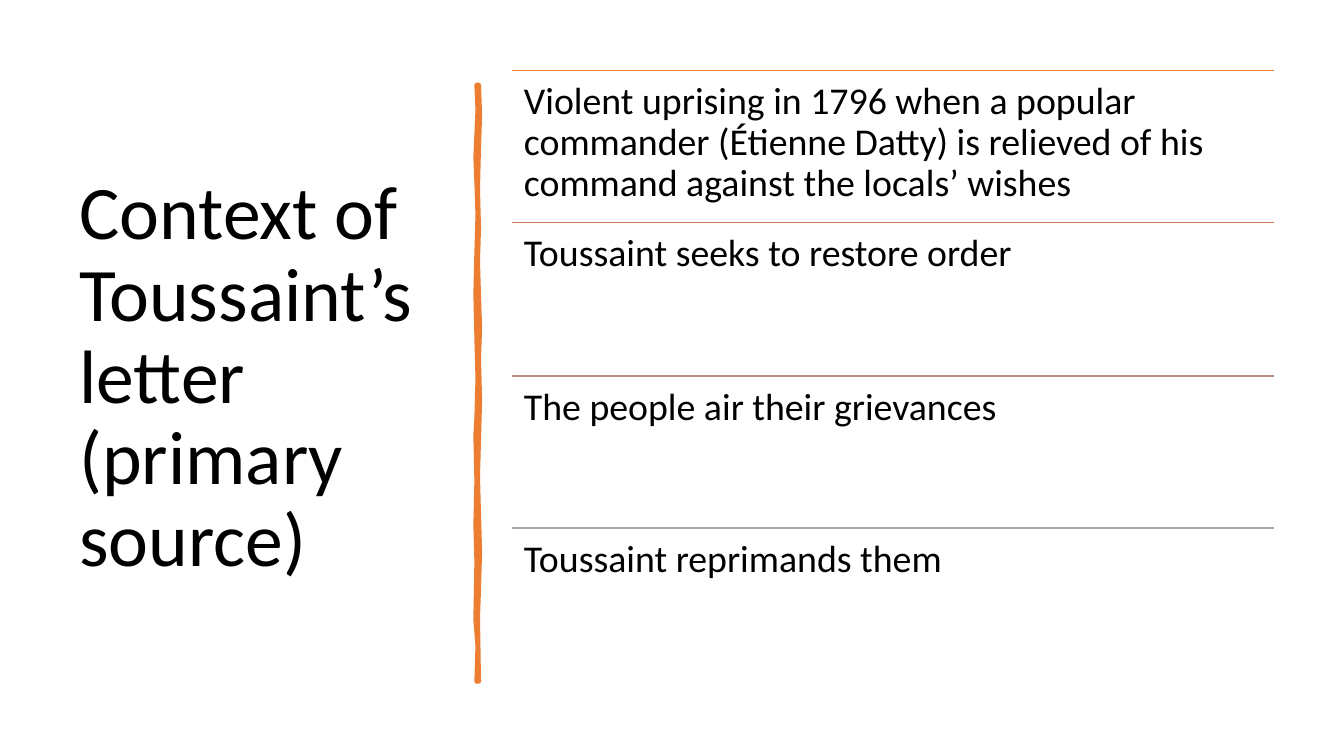
from dataclasses import dataclass

from lxml.etree import SubElement
from pptx import Presentation
from pptx.dml.color import RGBColor
from pptx.enum.shapes import MSO_CONNECTOR as Connector
from pptx.enum.text import MSO_ANCHOR as Anchor, MSO_AUTO_SIZE as AutoSize, PP_ALIGN as Align
from pptx.oxml.ns import qn
from pptx.util import Pt

PX = 9525


@dataclass(frozen=True)
class Theme:
    font: str = "Calibri"
    ink: str = "000000"
    accent: str = "ED7D31"
    rules: tuple = ("ED7D31", "D17B5C", "B98A82", "A5A5A5")
    title_size: int = 54
    point_size: int = 27
    stroke_width: float = 3.25
    rule_width: int = 1


THEME = Theme()

TITLE = "Context of Toussaint’s letter (primary source)"
POINTS = (
    "Violent uprising in 1796 when a popular commander (Étienne Datty) "
    "is relieved of his command against the locals’ wishes",
    "Toussaint seeks to restore order",
    "The people air their grievances",
    "Toussaint reprimands them",
)

RIGHT_EDGE = (
    (2, 0), (3, 29), (2, 59), (1, 99), (2, 136), (1, 168), (2, 201),
    (3, 231), (2, 261), (3, 300), (2, 338), (1, 373), (2, 409),
    (3, 444), (2, 480), (1, 508), (2, 568),
)
LEFT_EDGE = (
    (0, 568), (1, 534), (-1, 509), (0, 454), (-1, 419), (0, 377), (-1, 334),
    (0, 317), (1, 279), (0, 241), (-1, 199), (0, 159), (1, 124), (0, 93),
    (-1, 69), (1, 24), (0, 0),
)


def px(*lengths):
    return [length * PX for length in lengths]


def style(paragraph, size):
    paragraph.alignment = Align.LEFT
    paragraph.line_spacing = 0.9
    paragraph.font.name = THEME.font
    paragraph.font.size = Pt(size)
    paragraph.font.color.rgb = RGBColor.from_string(THEME.ink)


def place_title(slide, left, top, width, height):
    title = slide.shapes.title
    title.left, title.top, title.width, title.height = px(left, top, width, height)
    frame = title.text_frame
    frame.text = TITLE
    frame.word_wrap = True
    frame.auto_size = AutoSize.NONE
    frame.vertical_anchor = Anchor.MIDDLE
    style(frame.paragraphs[0], THEME.title_size)


def draw_brush_stroke(slide, left, top):
    outline = [(left + x, top + y) for x, y in RIGHT_EDGE + LEFT_EDGE]
    builder = slide.shapes.build_freeform(*outline[0], scale=PX)
    builder.add_line_segments(outline[1:], close=True)
    stroke = builder.convert_to_shape()
    stroke.shadow.inherit = False
    accent = RGBColor.from_string(THEME.accent)
    stroke.fill.solid()
    stroke.fill.fore_color.rgb = accent
    stroke.line.color.rgb = accent
    stroke.line.width = Pt(THEME.stroke_width)
    SubElement(stroke.line._get_or_add_ln(), qn("a:round"))


def draw_rule(slide, left, top, width, color):
    rule = slide.shapes.add_connector(
        Connector.STRAIGHT, *px(left, top, left + width, top))
    rule.line.color.rgb = RGBColor.from_string(color)
    rule.line.width = Pt(THEME.rule_width)
    SubElement(rule._element.spPr, qn("a:effectLst"))


def place_point(slide, left, top, width, height, wording):
    point = slide.shapes.add_textbox(*px(left, top, width, height))
    frame = point.text_frame
    frame.word_wrap = True
    frame.margin_left = frame.margin_right = 11 * PX
    frame.margin_top = frame.margin_bottom = 11 * PX
    frame.text = wording
    style(frame.paragraphs[0], THEME.point_size)


def place_points(slide, left, top, width, height):
    for row, (wording, color) in enumerate(zip(POINTS, THEME.rules)):
        row_top = top + row * height // len(POINTS)
        draw_rule(slide, left, row_top, width, color)
        place_point(slide, left, row_top, width, height // len(POINTS), wording)


def build_context_slide(deck):
    slide = deck.slides.add_slide(deck.slide_layouts.get_by_name("Title Only"))
    place_title(slide, 66, 67, 359, 587)
    draw_brush_stroke(slide, 454, 81)
    place_points(slide, 488, 67, 725, 582)


def main():
    deck = Presentation()
    deck.slide_width, deck.slide_height = px(1280, 720)
    build_context_slide(deck)
    deck.save("out.pptx")


if __name__ == "__main__":
    main()
